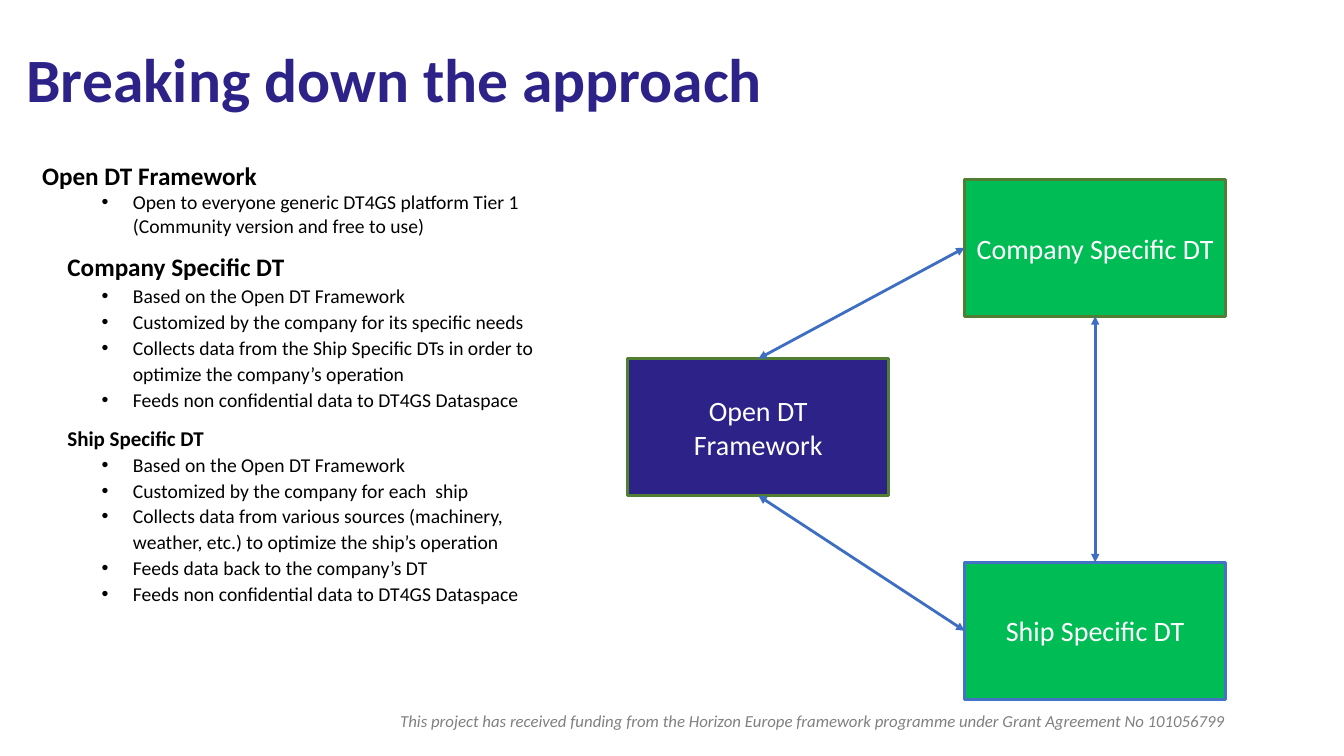
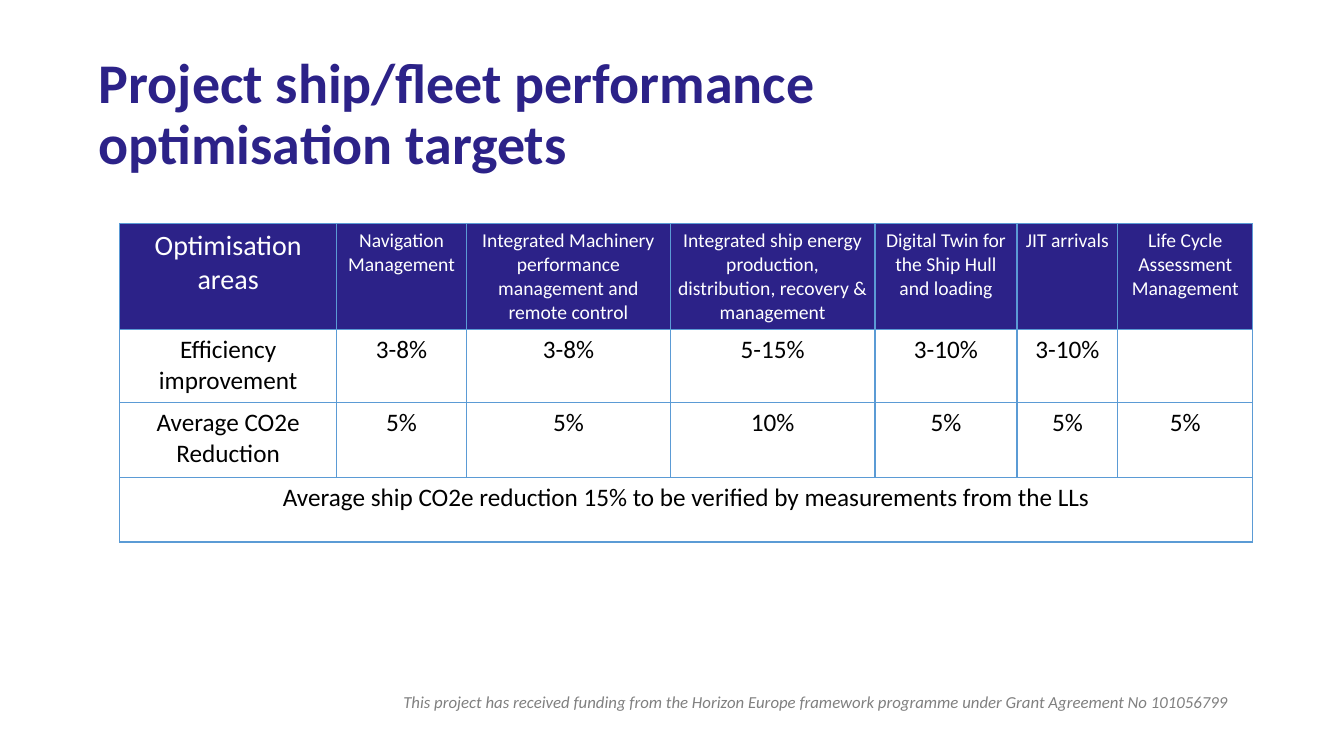
from pptx import Presentation
from pptx.dml.color import RGBColor
from pptx.enum.shapes import MSO_CONNECTOR as LINE, MSO_SHAPE as SHAPE
from pptx.enum.text import MSO_ANCHOR as ANCHOR, MSO_AUTO_SIZE as FIT, PP_ALIGN as ALIGN
from pptx.oxml.ns import qn
from pptx.util import Cm, Pt
from lxml.etree import SubElement

NAVY = RGBColor(0x2C, 0x22, 0x88)
GREEN = RGBColor(0x00, 0xBC, 0x55)
OLIVE = RGBColor(0x51, 0x7E, 0x33)
BLUE = RGBColor(0x44, 0x72, 0xC4)
ARROW = RGBColor(0x3E, 0x6E, 0xC2)
GRID = RGBColor(0x5B, 0x9B, 0xD5)
GREY = RGBColor(0x80, 0x80, 0x80)
BLACK = RGBColor(0, 0, 0)
WHITE = RGBColor(0xFF, 0xFF, 0xFF)

FUNDING = ("This project has received funding from the Horizon Europe framework "
           "programme under Grant Agreement No 101056799")
TOP, LEFT, BOTTOM = 0, 1, 2
BOX_W, BOX_H = 6.58, 3.45

SECTIONS = [
    ("Open DT Framework", dict(size=18, indent=0, gap=0, spacing=1), [
        "Open to everyone generic DT4GS platform Tier 1 (Community version and free to use)",
    ]),
    ("Company Specific DT", dict(size=18, indent=0.64, gap=10, spacing=1.1), [
        "Based on the Open DT Framework",
        "Customized by the company for its specific needs",
        "Collects data from the Ship Specific DTs in order to optimize the company’s operation",
        "Feeds non confidential data to DT4GS Dataspace",
    ]),
    ("Ship Specific DT", dict(size=15, indent=0.64, gap=10, spacing=1.1), [
        "Based on the Open DT Framework",
        "Customized by the company for each  ship",
        "Collects data from various sources (machinery, weather, etc.) to optimize the ship’s operation",
        "Feeds data back to the company’s DT",
        "Feeds non confidential data to DT4GS Dataspace",
    ]),
]

TARGETS = [
    ["Optimisation areas", "Navigation Management",
     "Integrated Machinery performance management and remote control",
     "Integrated ship energy production, distribution, recovery & management",
     "Digital Twin for the Ship Hull and loading", "JIT arrivals",
     "Life Cycle Assessment Management"],
    ["Efficiency improvement", "3-8%", "3-8%", "5-15%", "3-10%", "3-10%", ""],
    ["Average CO2e Reduction", "5%", "5%", "10%", "5%", "5%", "5%"],
    ["Average ship CO2e reduction 15% to be verified by measurements from the LLs"],
]
COL_WIDTHS = [5.46, 3.28, 5.13, 5.16, 3.58, 2.54, 3.4]
ROW_HEIGHTS = [2.62, 1.85, 1.88, 1.63]


class Deck:
    def __init__(self):
        self.prs = Presentation()
        self.prs.slide_width, self.prs.slide_height = Cm(33.87), Cm(19.05)
        self.s = None

    def slide(self, title, size, left, top, width, height):
        self.s = self.prs.slides.add_slide(self.prs.slide_layouts[5])
        sp = self.s.shapes.title
        sp.left, sp.top, sp.width, sp.height = map(Cm, (left, top, width, height))
        tf = sp.text_frame
        tf.auto_size = FIT.NONE
        tf.vertical_anchor = ANCHOR.MIDDLE
        p = tf.paragraphs[0]
        p.line_spacing = 0.9
        self.add_text(p, title, NAVY, size=size, bold=True, align=ALIGN.LEFT)

    def add_text(self, p, text, color, size, align=ALIGN.CENTER, **fmt):
        p.alignment = align
        r = p.add_run()
        r.text = text
        r.font.color.rgb = color
        style = dict(name="Calibri", size=Pt(size), bold=False, italic=False)
        for key, value in {**style, **fmt}.items():
            setattr(r.font, key, value)

    def text_frame(self, left, top, width, height, anchor=ANCHOR.TOP):
        tf = self.s.shapes.add_textbox(*map(Cm, (left, top, width, height))).text_frame
        tf.word_wrap = True
        tf.vertical_anchor = anchor
        return tf

    def footer(self, left, top):
        tf = self.text_frame(left, top, 21.97, 1.07, ANCHOR.MIDDLE)
        self.add_text(tf.paragraphs[0], FUNDING, GREY, 12, italic=True)

    def indent(self, p, left, hanging=0):
        pPr = p._p.get_or_add_pPr()
        pPr.set("marL", str(Cm(left)))
        pPr.set("indent", str(Cm(-hanging)))
        return pPr

    def outline(self, sections, *place):
        tf = self.text_frame(*place)
        p = tf.paragraphs[0]
        for heading, style, items in sections:
            if p is None:
                p = tf.add_paragraph()
            self.indent(p, style["indent"])
            p.space_before = Pt(style["gap"])
            self.add_text(p, heading, BLACK, style["size"], ALIGN.LEFT, bold=True)
            for item in items:
                p = tf.add_paragraph()
                pPr = self.indent(p, 2.29, 0.79)
                SubElement(pPr, qn("a:buFont"), typeface="Arial")
                SubElement(pPr, qn("a:buChar"), char="•")
                p.line_spacing = float(style["spacing"])
                self.add_text(p, item, BLACK, 14, ALIGN.LEFT)
            p = None

    def box(self, text, left, top, fill, line, margin=0.25):
        sp = self.s.shapes.add_shape(SHAPE.RECTANGLE, *map(Cm, (left, top, BOX_W, BOX_H)))
        sp.shadow.inherit = False
        sp.fill.solid()
        sp.fill.fore_color.rgb = fill
        sp.line.color.rgb = line
        sp.line.width = Pt(2)
        tf = sp.text_frame
        tf.word_wrap = True
        tf.vertical_anchor = ANCHOR.MIDDLE
        tf.margin_left = tf.margin_right = Cm(margin)
        self.add_text(tf.paragraphs[0], text, WHITE, 20)
        return sp

    def arrow(self, start, start_side, end, end_side):
        c = self.s.shapes.add_connector(LINE.STRAIGHT, 0, 0, 0, 0)
        c.begin_connect(start, start_side)
        c.end_connect(end, end_side)
        c.line.color.rgb = ARROW
        c.line.width = Pt(2)
        spPr = c._element.spPr
        ln = spPr.find(qn("a:ln"))
        for tag in ("a:headEnd", "a:tailEnd"):
            SubElement(ln, qn(tag), type="triangle")
        SubElement(spPr, qn("a:effectLst"))

    def borders(self, cell):
        tcPr = cell._tc.get_or_add_tcPr()
        for side in ("TB" if cell.is_spanned else "LRTB"):
            ln = SubElement(tcPr, qn(f"a:ln{side}"), w=str(Pt(0.96)))
            fill = SubElement(ln, qn("a:solidFill"))
            SubElement(fill, qn("a:srgbClr"), val=str(GRID))

    def table(self, rows, left, top):
        size = sum(COL_WIDTHS), sum(ROW_HEIGHTS)
        tbl = self.s.shapes.add_table(len(rows), len(COL_WIDTHS),
                                      *map(Cm, (left, top, *size))).table
        tbl.horz_banding = False
        for col, width in zip(tbl.columns, COL_WIDTHS):
            col.width = Cm(width)
        for row, height in zip(tbl.rows, ROW_HEIGHTS):
            row.height = Cm(height)
        last = len(rows) - 1
        tbl.cell(last, 0).merge(tbl.cell(last, len(COL_WIDTHS) - 1))
        for i, row in enumerate(tbl.rows):
            for j, cell in enumerate(row.cells):
                self.borders(cell)
                cell.margin_left = cell.margin_right = Cm(0.18)
                if i == 0:
                    cell.fill.solid()
                    cell.fill.fore_color.rgb = NAVY
                    color, points = WHITE, 14 if j else 20
                else:
                    cell.fill.background()
                    color, points = BLACK, 18
                if j < len(rows[i]) and rows[i][j]:
                    self.add_text(cell.text_frame.paragraphs[0], rows[i][j], color, points)


def main():
    deck = Deck()

    deck.slide("Breaking down the approach", 44, 0.41, 0.25, 29.21, 3.68)
    deck.footer(9.5, 17.63)
    deck.outline(SECTIONS, 0.81, 3.91, 13.69, 13.18)
    framework = deck.box("Open DT Framework", 15.82, 9.04, NAVY, OLIVE, margin=1.6)
    company = deck.box("Company Specific DT", 24.31, 4.52, GREEN, OLIVE)
    ship = deck.box("Ship Specific DT", 24.31, 14.17, GREEN, BLUE)
    deck.arrow(framework, TOP, company, LEFT)
    deck.arrow(company, BOTTOM, ship, TOP)
    deck.arrow(framework, BOTTOM, ship, LEFT)

    deck.slide("Project ship/fleet performance optimisation targets", 40,
               2.24, 1.37, 20.7, 3.1)
    deck.table(TARGETS, 3.02, 5.64)
    deck.footer(9.58, 17.15)

    deck.prs.save("out.pptx")


if __name__ == "__main__":
    main()
